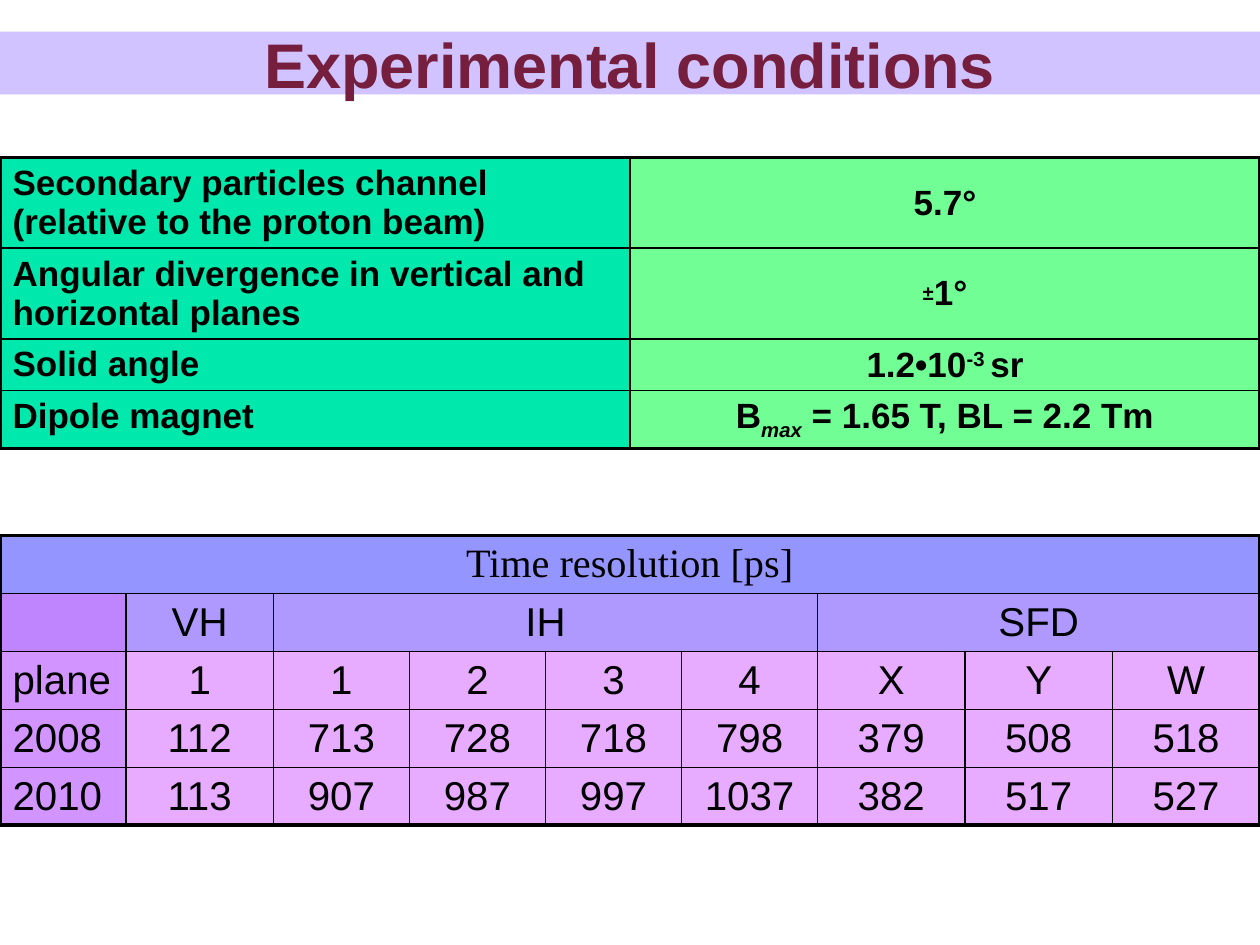
from dataclasses import dataclass

from lxml import etree
from pptx import Presentation
from pptx.dml.color import RGBColor
from pptx.enum.text import MSO_ANCHOR, MSO_AUTO_SIZE, PP_ALIGN
from pptx.oxml.ns import qn
from pptx.util import Emu, Inches, Pt

LEFT, CENTER = PP_ALIGN.LEFT, PP_ALIGN.CENTER
TOP, MIDDLE = MSO_ANCHOR.TOP, MSO_ANCHOR.MIDDLE
NO_AUTOFIT = MSO_AUTO_SIZE.NONE

BLACK = RGBColor(0x00, 0x00, 0x00)
MAROON = RGBColor(0x76, 0x1E, 0x3D)
LAVENDER = RGBColor(0xD0, 0xC3, 0xFF)
TEAL = RGBColor(0x00, 0xE8, 0xAB)
LIGHT_GREEN = RGBColor(0x70, 0xFE, 0x95)
PERIWINKLE = RGBColor(0x95, 0x95, 0xFF)
VIOLET = RGBColor(0xBF, 0x85, 0xFF)
LILAC = RGBColor(0xAF, 0x99, 0xFF)
ORCHID = RGBColor(0xD2, 0x95, 0xFF)
PINK = RGBColor(0xE7, 0xAB, 0xFF)

SANS, SERIF = "Arial", "Times New Roman"
SLIDE_WIDTH, SLIDE_HEIGHT = Inches(10), Inches(7.5)
GRID_ROW = SLIDE_HEIGHT / 30
OUTER_LINE, INNER_LINE = Pt(2.25), Pt(1)


@dataclass(frozen=True)
class Run:
    text: str
    baseline: int = 0
    italic: bool = False


@dataclass(frozen=True)
class Entry:
    runs: tuple[Run, ...]
    fill: RGBColor
    align: PP_ALIGN = CENTER
    anchor: MSO_ANCHOR = TOP
    span: int = 1
    font: str = SANS


@dataclass(frozen=True)
class Grid:
    top_row: int
    columns: tuple[float, ...]
    row_heights: tuple[float, ...]
    entries: tuple[tuple[Entry, ...], ...]
    size: int
    bold: bool


def entry(text: str, fill: RGBColor, **options) -> Entry:
    return Entry((Run(text),), fill, **options)


def add_run(paragraph, run: Run, font: str, size: int, bold: bool, color: RGBColor) -> None:
    part = paragraph.add_run()
    part.text = run.text
    part.font.name = font
    part.font.size = Pt(size)
    part.font.bold = bold
    part.font.italic = run.italic
    part.font.color.rgb = color
    if run.baseline:
        part.font._element.set("baseline", str(run.baseline * 1000))


def set_borders(cell, widths: dict[str, int]) -> None:
    properties = cell._tc.get_or_add_tcPr()
    for position, (side, width) in enumerate(widths.items()):
        line = etree.Element(qn(f"a:ln{side}"), w=str(width))
        solid = etree.SubElement(line, qn("a:solidFill"))
        etree.SubElement(solid, qn("a:srgbClr"), val=str(BLACK))
        properties.insert(position, line)


def fill_cell(cell, content: Entry, grid: Grid) -> None:
    cell.fill.solid()
    cell.fill.fore_color.rgb = content.fill
    cell.vertical_anchor = content.anchor
    paragraph = cell.text_frame.paragraphs[0]
    paragraph.alignment = content.align
    for run in content.runs:
        add_run(paragraph, run, content.font, grid.size, grid.bold, BLACK)


def draw_grid(slide, grid: Grid) -> None:
    row_count, column_count = len(grid.entries), len(grid.columns)
    table = slide.shapes.add_table(
        row_count, column_count, 0, Emu(round(grid.top_row * GRID_ROW)),
        SLIDE_WIDTH, Inches(sum(grid.row_heights)),
    ).table
    table.first_row = table.horz_banding = False
    for column, width in zip(table.columns, grid.columns):
        column.width = Inches(width)
    for row, height in zip(table.rows, grid.row_heights):
        row.height = Inches(height)
    for row, contents in enumerate(grid.entries):
        column = 0
        for content in contents:
            cell = table.cell(row, column)
            end = column + content.span
            if content.span > 1:
                cell.merge(table.cell(row, end - 1))
            fill_cell(cell, content, grid)
            on_edge = {
                "L": column == 0, "R": end == column_count,
                "T": row == 0, "B": row == row_count - 1,
            }
            set_borders(cell, {
                side: OUTER_LINE if outer else INNER_LINE for side, outer in on_edge.items()
            })
            column = end


def draw_title(slide, text: str) -> None:
    title = slide.shapes.title
    title.left, title.top = 0, Emu(round(GRID_ROW))
    title.width, title.height = SLIDE_WIDTH, Emu(round(2 * GRID_ROW))
    title.fill.solid()
    title.fill.fore_color.rgb = LAVENDER
    frame = title.text_frame
    frame.auto_size = NO_AUTOFIT
    frame.word_wrap = True
    frame.vertical_anchor = MIDDLE
    frame.paragraphs[0].alignment = CENTER
    add_run(frame.paragraphs[0], Run(text), SANS, 36, True, MAROON)


def condition(label: str, *runs: Run, anchor: MSO_ANCHOR = MIDDLE) -> tuple[Entry, ...]:
    return entry(label, TEAL, align=LEFT), Entry(runs, LIGHT_GREEN, anchor=anchor)


def measurements(label: str, *values: str) -> tuple[Entry, ...]:
    return (entry(label, ORCHID, align=LEFT), *(entry(value, PINK) for value in values))


CONDITIONS = Grid(
    top_row=5,
    columns=(5, 5),
    row_heights=(0.72, 0.72, 0.41, 0.46),
    entries=(
        condition("Secondary particles channel (relative to the proton beam)", Run("5.7°")),
        condition("Angular divergence in vertical and horizontal planes", Run("±", 14), Run("1°")),
        condition("Solid angle", Run("1.2•10"), Run("-3 ", 30), Run("sr")),
        condition("Dipole magnet", Run("B"), Run("max", -25, True),
                  Run(" = 1.65 T, BL = 2.2 Tm"), anchor=TOP),
    ),
    size=20,
    bold=True,
)

TIME_RESOLUTION = Grid(
    top_row=17,
    columns=(1, 1.17, *[1.08] * 4, *[1.17] * 3),
    row_heights=(0.46,) * 5,
    entries=(
        (entry("Time resolution [ps]", PERIWINKLE, span=9, font=SERIF),),
        (Entry((), VIOLET), entry("VH", LILAC), entry("IH", LILAC, span=4),
         entry("SFD", LILAC, span=3, anchor=MIDDLE)),
        measurements("plane", "1", "1", "2", "3", "4", "X", "Y", "W"),
        measurements("2008", "112", "713", "728", "718", "798", "379", "508", "518"),
        measurements("2010", "113", "907", "987", "997", "1037", "382", "517", "527"),
    ),
    size=23,
    bold=False,
)


def main() -> None:
    deck = Presentation()
    deck.slide_width, deck.slide_height = SLIDE_WIDTH, SLIDE_HEIGHT
    slide = deck.slides.add_slide(deck.slide_layouts[5])
    draw_title(slide, "Experimental conditions")
    for grid in (CONDITIONS, TIME_RESOLUTION):
        draw_grid(slide, grid)
    deck.save("out.pptx")


if __name__ == "__main__":
    main()
